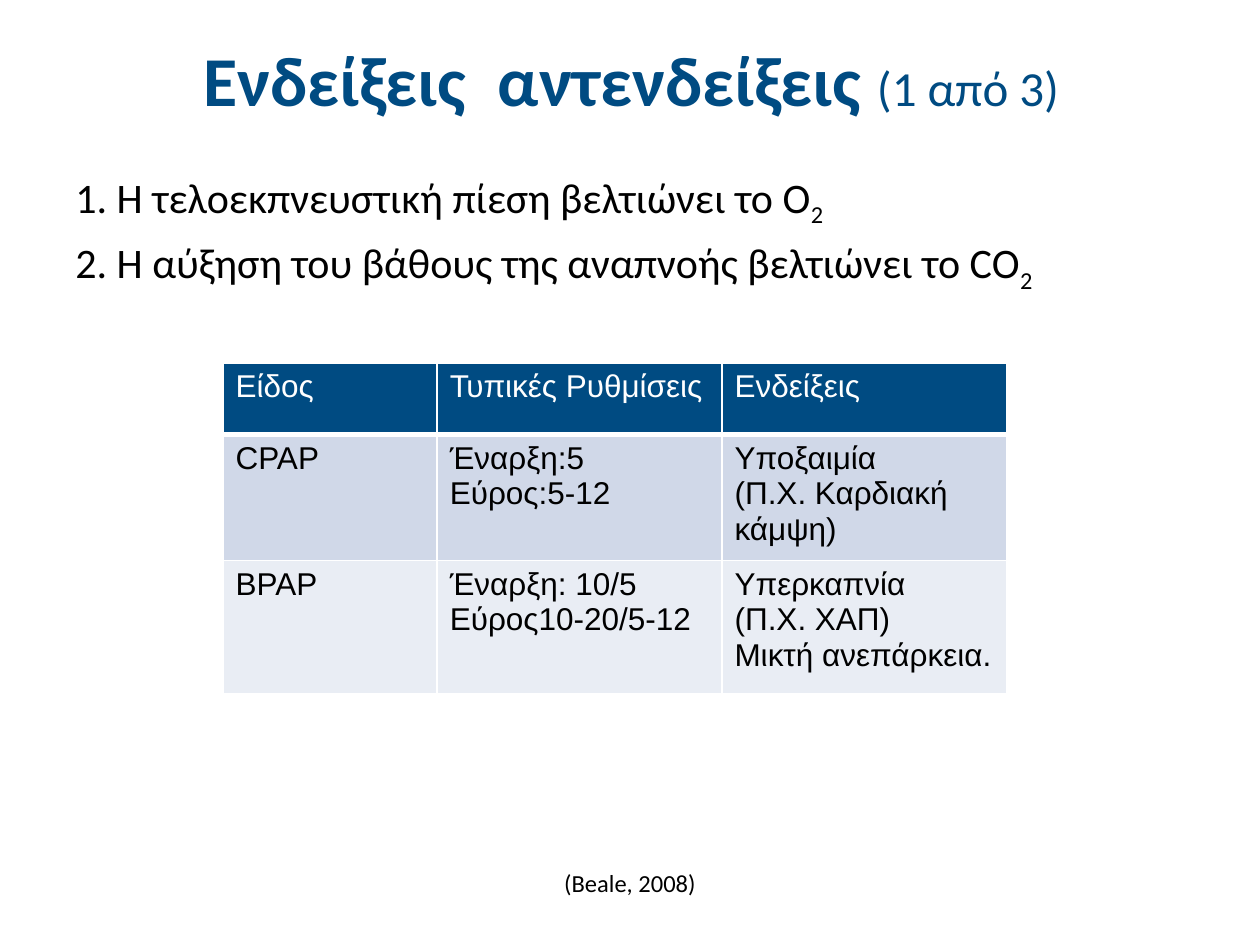
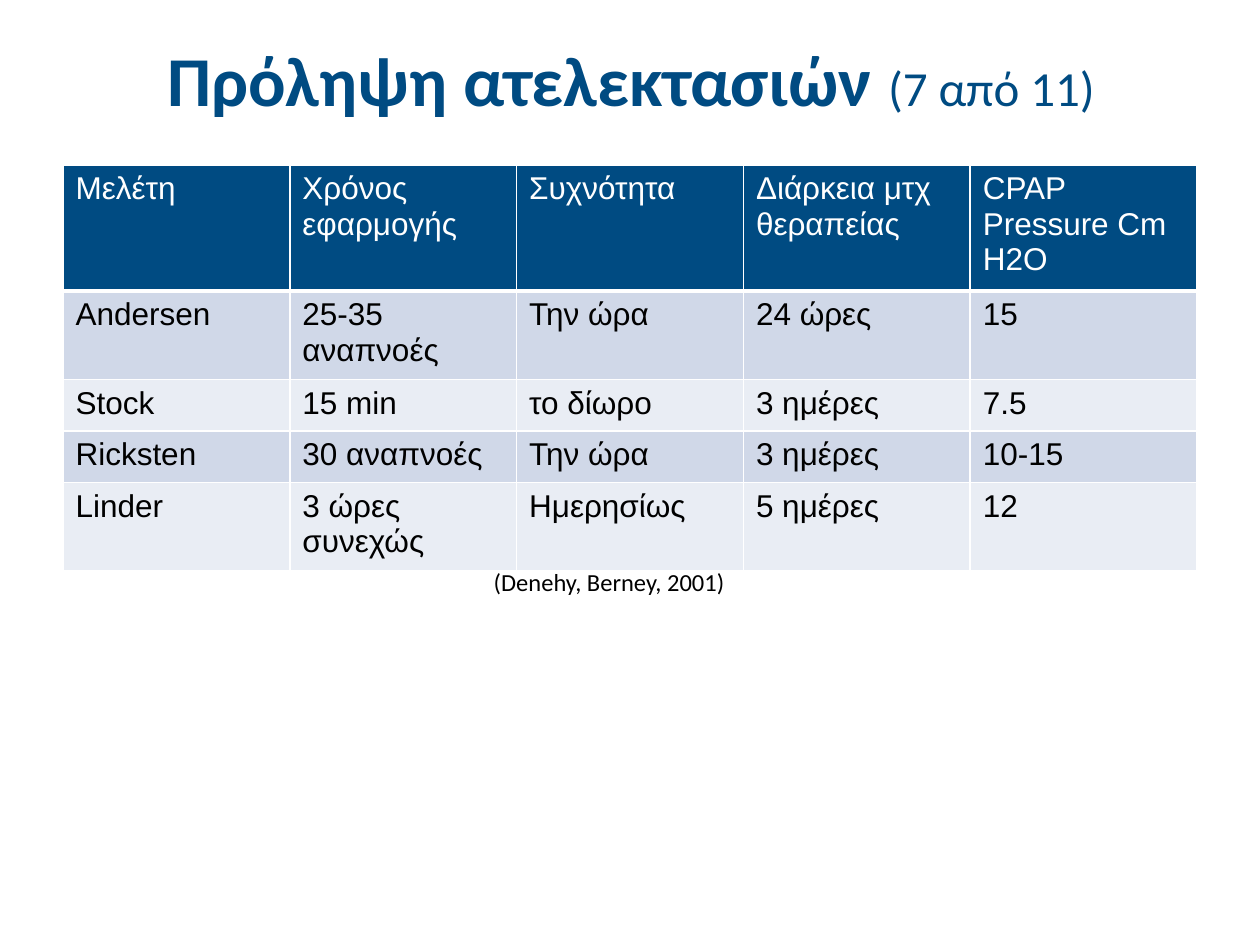
from dataclasses import dataclass

from lxml import etree
from pptx import Presentation
from pptx import util as u
from pptx.dml.color import RGBColor
from pptx.enum import text
from pptx.oxml.ns import qn


@dataclass(frozen=True)
class Theme:
    """Colours, fonts and type sizes shared by the slides."""
    navy: str = "004B82"
    ink: str = "000000"
    paper: str = "FFFFFF"
    bands: tuple = ("D0D8E8", "E9EDF4")
    heading_font: str = "Calibri"
    table_font: str = "Arial"
    title_size: int = 40
    part_size: int = 28
    body_size: int = 24
    cell_size: int = 18
    source_size: int = 14


class Deck:
    """Draws the elements on a grid of 20 columns by 15 rows."""
    columns, rows = 20, 15

    def __init__(self, theme):
        self.theme = theme
        self.show = Presentation()
        self.show.slide_width, self.show.slide_height = u.Inches(10), u.Inches(7.5)
        self.slide = None

    def across(self, columns):
        return round(self.show.slide_width * columns / self.columns)

    def down(self, rows):
        return round(self.show.slide_height * rows / self.rows)

    def new_slide(self, heading, part):
        self.slide = self.show.slides.add_slide(self.show.slide_layouts[6])
        theme = self.theme
        frame = self.box((1.02, 0.26, 18, 1.98), vertical_anchor=text.MSO_ANCHOR.MIDDLE)
        line = frame.paragraphs[0]
        line.alignment = text.PP_ALIGN.CENTER
        for words, size, bold in ((heading + " ", theme.title_size, True),
                                  (part, theme.part_size, False)):
            self.run(line, words, size, theme.navy, bold=bold)

    def box(self, place, **formats):
        left, top, width, height = place
        frame = self.slide.shapes.add_textbox(self.across(left), self.down(top),
                                              self.across(width), self.down(height)).text_frame
        for key, value in {"word_wrap": True, **formats}.items():
            setattr(frame, key, value)
        return frame

    def run(self, line, words, size, color, font=None, bold=False):
        piece = line.add_run()
        piece.text = words
        formats = {"name": font or self.theme.heading_font, "size": u.Pt(size), "bold": bold}
        for key, value in formats.items():
            setattr(piece.font, key, value)
        piece.font.color.rgb = RGBColor.from_string(color)
        return piece

    def points(self, place, points):
        frame = self.box(place)
        size, color = self.theme.body_size, self.theme.ink
        for index, (statement, subscript) in enumerate(points):
            line = frame.add_paragraph() if index else frame.paragraphs[0]
            line.space_before = u.Pt(size * 0.2)
            self.run(line, statement, size, color)
            lowered = self.run(line, subscript, size, color)
            lowered._r.get_or_add_rPr().set("baseline", "-25000")

    def source(self, place, citation, frame_formats, line_formats):
        line = self.box(place, **frame_formats).paragraphs[0]
        for key, value in line_formats.items():
            setattr(line, key, value)
        self.run(line, citation, self.theme.source_size, self.theme.ink)

    def table(self, left, top, widths, heights, records):
        table = self.slide.shapes.add_table(
            len(heights), len(widths), self.across(left), self.down(top),
            self.across(sum(widths)), self.down(sum(heights))).table
        for column, width in zip(table.columns, widths):
            column.width = self.across(width)
        for row, height in zip(table.rows, heights):
            row.height = self.down(height)
        for number, record in enumerate(records):
            for position, content in enumerate(record):
                self.cell(table.cell(number, position), content, number)

    def cell(self, cell, content, number):
        theme = self.theme
        fill, color = ((theme.bands[(number - 1) % 2], theme.ink) if number
                       else (theme.navy, theme.paper))
        self.borders(cell, {"L": 1, "R": 1, "T": 3 if number == 1 else 1,
                            "B": 1 if number else 3})
        cell.fill.solid()
        cell.fill.fore_color.rgb = RGBColor.from_string(fill)
        for index, words in enumerate(content.split("\n")):
            frame = cell.text_frame
            line = frame.add_paragraph() if index else frame.paragraphs[0]
            self.run(line, words, theme.cell_size, color, theme.table_font)

    def borders(self, cell, sides):
        properties = cell._tc.get_or_add_tcPr()
        for side, weight in sides.items():
            edge = etree.SubElement(properties, qn("a:ln" + side), w=str(u.Pt(weight)))
            paint = etree.SubElement(edge, qn("a:solidFill"))
            etree.SubElement(paint, qn("a:srgbClr"), val=self.theme.paper)


def indications(deck):
    """Ventilation modes with their settings and indications."""
    deck.new_slide("Ενδείξεις  αντενδείξεις", "(1 από 3)")
    deck.points((1, 2.62, 18, 2.52), (
        ("1. Η τελοεκπνευστική πίεση βελτιώνει το Ο", "2"),
        ("2. Η αύξηση του βάθους της αναπνοής βελτιώνει το CO", "2")))
    deck.table(3.54, 5.76, (3.4, 4.52, 4.52), (1.14, 1.76, 2.12), (
        ("Είδος", "Τυπικές Ρυθμίσεις", "Ενδείξεις"),
        ("CPAP", "Έναρξη:5\nΕύρος:5-12", "Υποξαιμία\n(Π.Χ. Καρδιακή κάμψη)"),
        ("BPAP", "Έναρξη: 10/5\nΕύρος10-20/5-12",
         "Υπερκαπνία\n(Π.Χ. ΧΑΠ)\nΜικτή ανεπάρκεια.")))
    deck.source((0.24, 13.8, 19.52, 0.88), "(Beale, 2008)", {},
                {"alignment": text.PP_ALIGN.CENTER, "line_spacing": 0.73,
                 "space_before": u.Pt(2.8)})


def prevention(deck):
    """Studies on the prevention of atelectasis."""
    deck.new_slide("Πρόληψη ατελεκτασιών", "(7 από 11)")
    deck.table(1, 2.62, (3.6,) * 5, (0.82,) * 5, (
        ("Μελέτη", "Χρόνος εφαρμογής", "Συχνότητα", "Διάρκεια μτχ θεραπείας",
         "CPAP Pressure Cm H2O"),
        ("Andersen", "25-35 αναπνοές", "Την ώρα", "24 ώρες", "15"),
        ("Stock", "15 min", "το δίωρο", "3 ημέρες", "7.5"),
        ("Ricksten", "30 αναπνοές", "Την ώρα", "3 ημέρες", "10-15"),
        ("Linder", "3 ώρες συνεχώς", "Ημερησίως", "5 ημέρες", "12")))
    deck.source((7.64, 8.9, 4.1, 0.68), "(Denehy, Berney, 2001)",
                {"word_wrap": False, "auto_size": text.MSO_AUTO_SIZE.SHAPE_TO_FIT_TEXT}, {})


def main():
    """Build both slides and save the deck."""
    deck = Deck(Theme())
    indications(deck)
    prevention(deck)
    deck.show.save("out.pptx")


if __name__ == "__main__":
    main()
